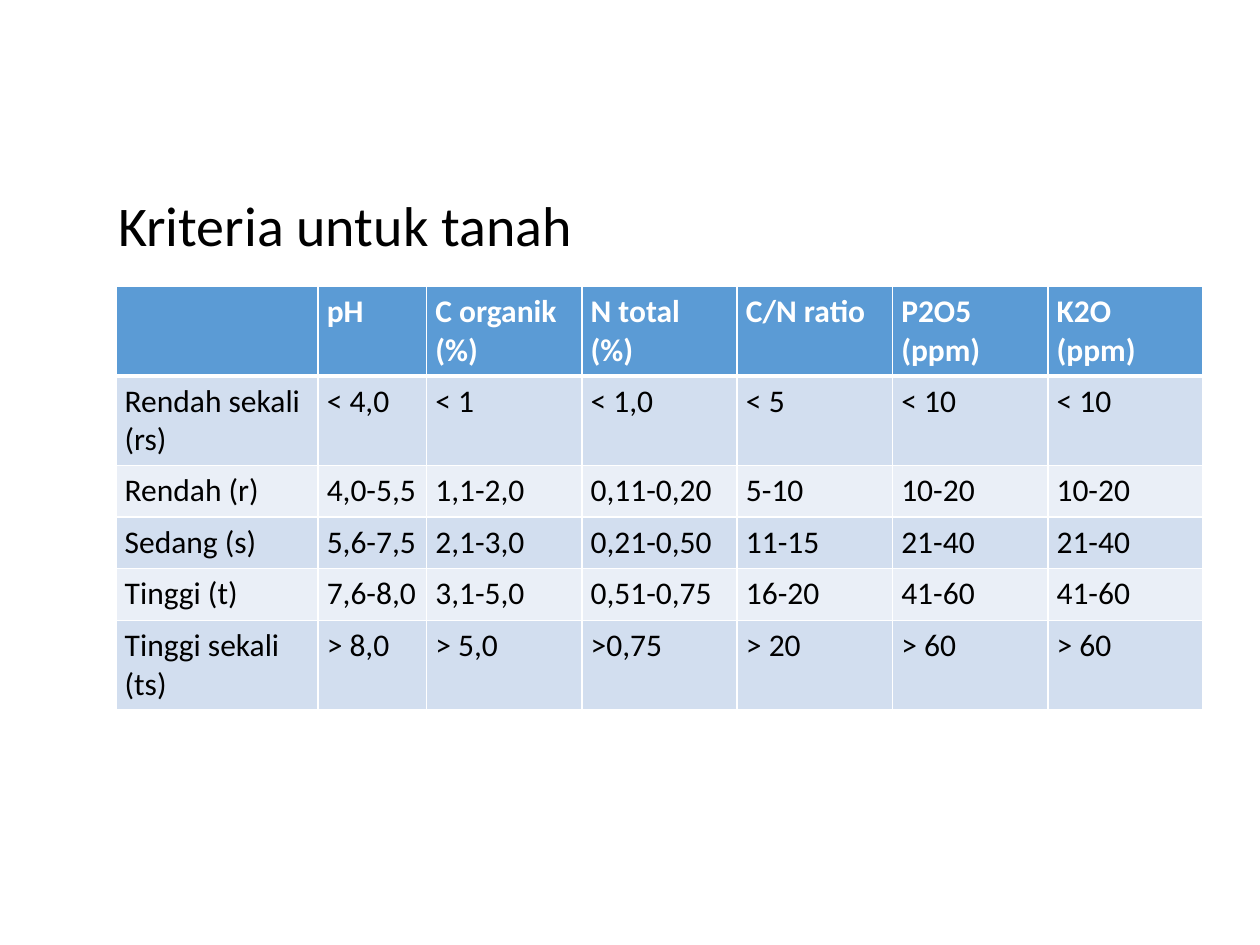
import pptx
import pptx.dml.color
import pptx.enum.text
import pptx.oxml
import pptx.oxml.ns
import pptx.util

RGBColor = pptx.dml.color.RGBColor
WHITE = RGBColor(0xFF, 0xFF, 0xFF)
BLACK = RGBColor(0x00, 0x00, 0x00)
BLUE = RGBColor(0x5B, 0x9B, 0xD5)
BAND_DARK = RGBColor(0xD2, 0xDE, 0xEF)
BAND_LIGHT = RGBColor(0xEA, 0xEF, 0xF7)

COLUMN_WEIGHTS = [1.6, 0.86] + [1.23] * 5
CRITERIA = [
    ["", "pH", "C organik (%)", "N total (%)", "C/N ratio", "P2O5 (ppm)", "K2O (ppm)"],
    ["Rendah sekali (rs)", "< 4,0", "< 1", "< 1,0", "< 5", "< 10", "< 10"],
    ["Rendah (r)", "4,0-5,5", "1,1-2,0", "0,11-0,20", "5-10", "10-20", "10-20"],
    ["Sedang (s)", "5,6-7,5", "2,1-3,0", "0,21-0,50", "11-15", "21-40", "21-40"],
    ["Tinggi (t)", "7,6-8,0", "3,1-5,0", "0,51-0,75", "16-20", "41-60", "41-60"],
    ["Tinggi sekali (ts)", "> 8,0", "> 5,0", ">0,75", "> 20", "> 60", "> 60"],
]


class SlideBuilder:
    def __init__(self, prs, font="Calibri"):
        self.prs = prs
        self.font = font
        self.s = prs.slides.add_slide(prs.slide_layouts[6])

    def box(self, left, top, width, height):
        """Turn percentages of the slide's width and height into lengths."""
        w, h = self.prs.slide_width, self.prs.slide_height
        return [int(share * size / 100)
                for share, size in zip((left, top, width, height), (w, h, w, h))]

    def run(self, p, text, size, color, bold=False):
        r = p.add_run()
        r.text = text
        r.font.name = self.font
        r.font.size = pptx.util.Pt(size)
        r.font.color.rgb = color
        r.font.bold = bold

    def heading(self, text, place, size):
        tf = self.s.shapes.add_textbox(*self.box(*place)).text_frame
        tf.word_wrap = True
        tf.auto_size = pptx.enum.text.MSO_AUTO_SIZE.SHAPE_TO_FIT_TEXT
        self.run(tf.paragraphs[0], text, size, BLACK)

    def borders(self, cell, top, bottom):
        """Draw white cell edges; top and bottom widths are in points."""
        tc_pr = cell._tc.get_or_add_tcPr()
        for side, width in (("L", 1), ("R", 1), ("T", top), ("B", bottom)):
            tc_pr.append(pptx.oxml.parse_xml(
                f'<a:ln{side} {pptx.oxml.ns.nsdecls("a")} w="{pptx.util.Pt(width)}">'
                f'<a:solidFill><a:srgbClr val="{WHITE}"/></a:solidFill></a:ln{side}>'))

    def table(self, rows, weights, place, size):
        left, top, width, height = self.box(*place)
        table = self.s.shapes.add_table(
            len(rows), len(weights), left, top, width, height).table
        for column, weight in zip(table.columns, weights):
            column.width = int(width * weight / sum(weights))
        for i, row in enumerate(rows):
            header = i == 0
            fill = BLUE if header else BAND_DARK if i % 2 else BAND_LIGHT
            for j, text in enumerate(row):
                cell = table.cell(i, j)
                cell.margin_left = cell.margin_right = pptx.util.Inches(0.07)
                self.borders(cell, 3 if i == 1 else 1, 3 if header else 1)
                cell.fill.solid()
                cell.fill.fore_color.rgb = fill
                if text:
                    self.run(cell.text_frame.paragraphs[0], text, size,
                             WHITE if header else BLACK, header)


def main():
    prs = pptx.Presentation()
    prs.slide_width = pptx.util.Inches(10)
    prs.slide_height = pptx.util.Inches(7.5)
    slide = SlideBuilder(prs)
    slide.table(CRITERIA, COLUMN_WEIGHTS, (9.2, 30.3, 86.3, 32.8), 18)
    slide.heading("Kriteria untuk tanah", (8.4, 19.5, 44.1, 8.5), 32)
    prs.save("out.pptx")


if __name__ == "__main__":
    main()
